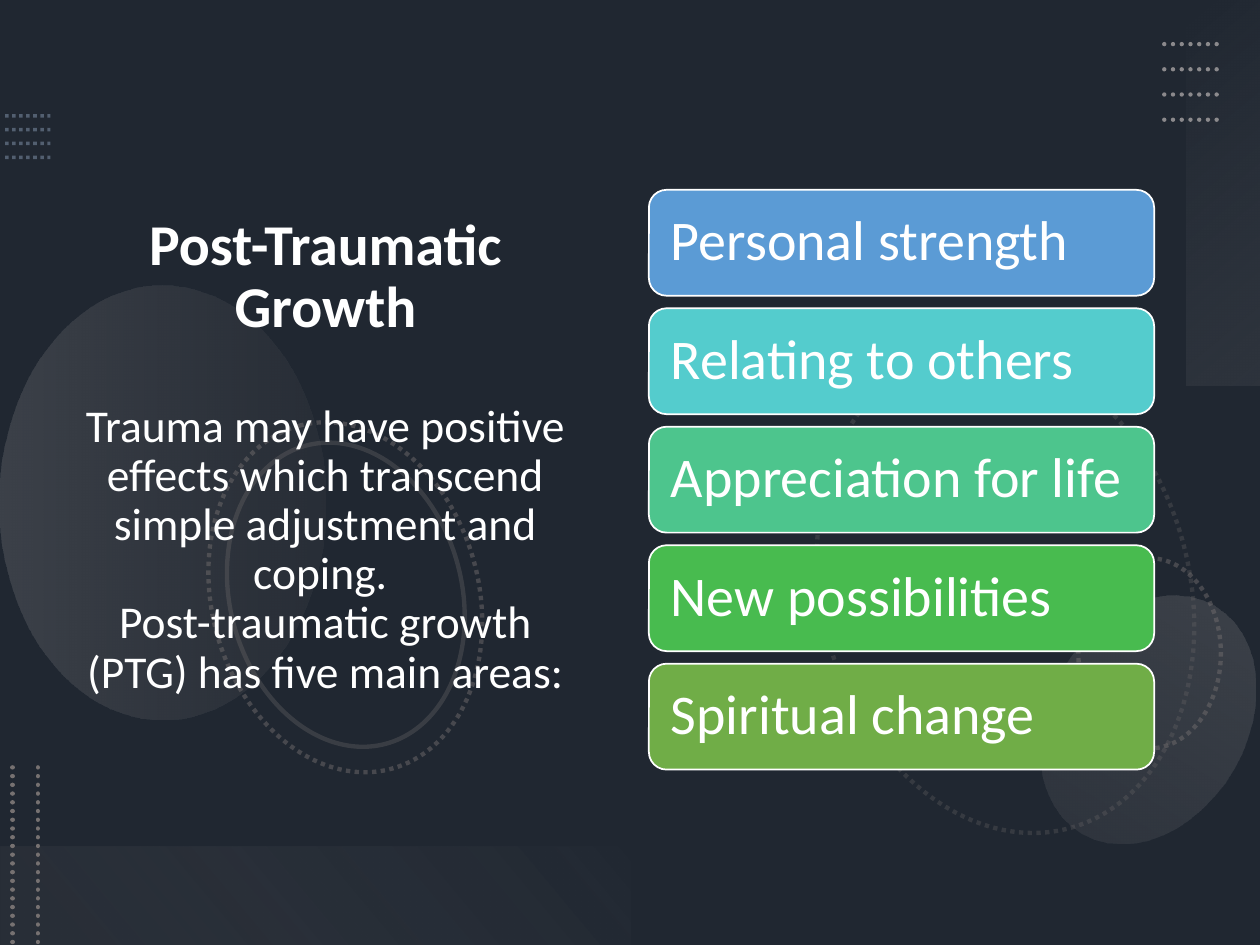
from pptx import Presentation
from pptx.dml.color import RGBColor as RGB
from pptx.enum.dml import MSO_LINE as Dash
from pptx.enum.shapes import MSO_CONNECTOR as Conn, MSO_SHAPE as Kind
from pptx.enum.text import MSO_ANCHOR as Anchor, PP_ALIGN as Align
from pptx.oxml import parse_xml
from pptx.oxml.ns import nsdecls
from pptx.util import Pt

SLATE = RGB(0x44, 0x54, 0x6A)
BLACK = RGB(0, 0, 0)
WHITE = RGB(255, 255, 255)
BLUE = RGB(0x84, 0x97, 0xB0)
GRAY = RGB(0x76, 0x71, 0x71)
SILVER = RGB(0xAF, 0xAB, 0xAB)
PALE = RGB(0xF5, 0xF5, 0xF5)

TITLE = [
    ("Post-Traumatic Growth", 33, True, 0),
    ("Trauma may have positive effects which transcend simple adjustment and coping. ", 26, False, 36),
    ("Post-traumatic growth (PTG) has five main areas:", 26, False, 0),
]
AREAS = [
    ("Personal strength", RGB(0x5B, 0x9B, 0xD5)),
    ("Relating to others", RGB(0x54, 0xCC, 0xCD)),
    ("Appreciation for life", RGB(0x4D, 0xC5, 0x8D)),
    ("New possibilities", RGB(0x48, 0xBB, 0x4F)),
    ("Spiritual change", RGB(0x70, 0xAD, 0x47)),
]
RINGS = [
    ((434.2, 232.6, 280.8, 210.2), 75, Dash.ROUND_DOT, 25),
    ((602.6, 332.6, 108.7, 81.4), 270, Dash.ROUND_DOT, 45),
    ((95.8, 265, 203, 152.6), 75, Dash.ROUND_DOT, 45),
    ((109.4, 273.6, 176.4, 132.5), 75, None, 30),
]
GLOWS = [
    (Kind.OVAL, (-31, 194.4, 247.7, 185.8), 270, 90, [(0, SILVER, 20), (100, GRAY, 10)]),
    (Kind.OVAL, (599.8, 336.2, 112.3, 149.8), 210, 90, [(0, SILVER, 10), (100, SILVER, 20)]),
    (Kind.RECTANGLE, (589, 89.3, 220.3, 41.8), 270, 140, [(0, PALE, 0), (100, SILVER, 10)]),
    (Kind.RECTANGLE, (0, 483.8, 360, 56.2), 180, 140, [(10, GRAY, 10), (100, PALE, 0)]),
]
DOTS = [
    ((2.9, 66.2, 28.8, 66.2), (0, 7.9), 4, BLUE, 2, 50, "flat"),
    ((665.3, 25.2, 697.7, 25.2), (0, 14.4), 4, SILVER, 2.5, 75, "rnd"),
    ((7.2, 438.5, 7.2, 540), (14.4, 0), 2, GRAY, 2.5, 100, "rnd"),
]

deck = Presentation()
deck.slide_width, deck.slide_height = Pt(720), Pt(540)
slide = deck.slides.add_slide(deck.slide_layouts[6])
slide.background.fill.solid()
slide.background.fill.fore_color.rgb = SLATE


def fade(item, alpha):
    for tint in item.element.xpath("./p:spPr//a:srgbClr"):
        tint.append(parse_xml(f'<a:alpha {nsdecls("a")} val="{alpha * 1000}"/>'))


def add(kind, box, turn=0, fill=None):
    item = slide.shapes.add_shape(kind, *map(Pt, box))
    item.shadow.inherit = False
    item.rotation = turn
    item.line.fill.background()
    if fill is None:
        item.fill.background()
    else:
        item.fill.solid()
        item.fill.fore_color.rgb = fill
    return item


def stroke(item, color, width, dash=None):
    item.line.color.rgb = color
    item.line.width = Pt(width)
    if dash:
        item.line.dash_style = dash


def glow(kind, box, turn, angle, stops):
    item = add(kind, box, turn)
    marks = "".join(
        f'<a:gs pos="{pos * 1000}"><a:srgbClr val="{color}">'
        f'<a:alpha val="{alpha * 1000}"/></a:srgbClr></a:gs>'
        for pos, color, alpha in stops
    )
    blank = item.element.xpath("./p:spPr/a:noFill")[0]
    blank.getparent().replace(blank, parse_xml(
        f'<a:gradFill {nsdecls("a")} rotWithShape="1"><a:gsLst>{marks}</a:gsLst>'
        f'<a:lin ang="{angle * 60000}" scaled="0"/></a:gradFill>'
    ))


def write(para, size, bold=False):
    para.line_spacing = 0.9
    for run in para.runs:
        run.font.name = "Calibri"
        run.font.size = Pt(size)
        run.font.bold = bold
        run.font.color.rgb = WHITE


fade(add(Kind.RECTANGLE, (0, 0, 720, 540), fill=BLACK), 53)

for part in GLOWS:
    glow(*part)

for box, turn, dash, alpha in RINGS:
    ring = add(Kind.OVAL, box, turn)
    stroke(ring, GRAY, 2.5, dash)
    fade(ring, alpha)

for (x1, y1, x2, y2), (dx, dy), count, color, width, alpha, cap in DOTS:
    for i in range(count):
        ends = (x1 + i * dx, y1 + i * dy, x2 + i * dx, y2 + i * dy)
        row = slide.shapes.add_connector(Conn.STRAIGHT, *map(Pt, ends))
        stroke(row, color, width, Dash.ROUND_DOT)
        fade(row, alpha)
        row.element.xpath("./p:spPr/a:ln")[0].set("cap", cap)
        row.element.spPr.append(parse_xml(f'<a:effectLst {nsdecls("a")}/>'))

frame = slide.shapes.add_textbox(Pt(37), Pt(38.9), Pt(298), Pt(444.2)).text_frame
frame.word_wrap = True
frame.vertical_anchor = Anchor.MIDDLE
for i, (text, size, bold, gap) in enumerate(TITLE):
    para = frame.add_paragraph() if i else frame.paragraphs[0]
    para.text = text
    para.alignment = Align.CENTER
    para.space_before = Pt(gap)
    write(para, size, bold)

for i, (text, color) in enumerate(AREAS):
    card = add(Kind.ROUNDED_RECTANGLE, (370.8, 108.5 + i * 67.7, 288.7, 60.5), fill=color)
    stroke(card, WHITE, 1)
    frame = card.text_frame
    frame.text = text
    frame.word_wrap = True
    frame.vertical_anchor = Anchor.MIDDLE
    frame.margin_left = Pt(9.6)
    frame.margin_right = Pt(6)
    frame.paragraphs[0].alignment = Align.LEFT
    write(frame.paragraphs[0], 32)

deck.save("out.pptx")
